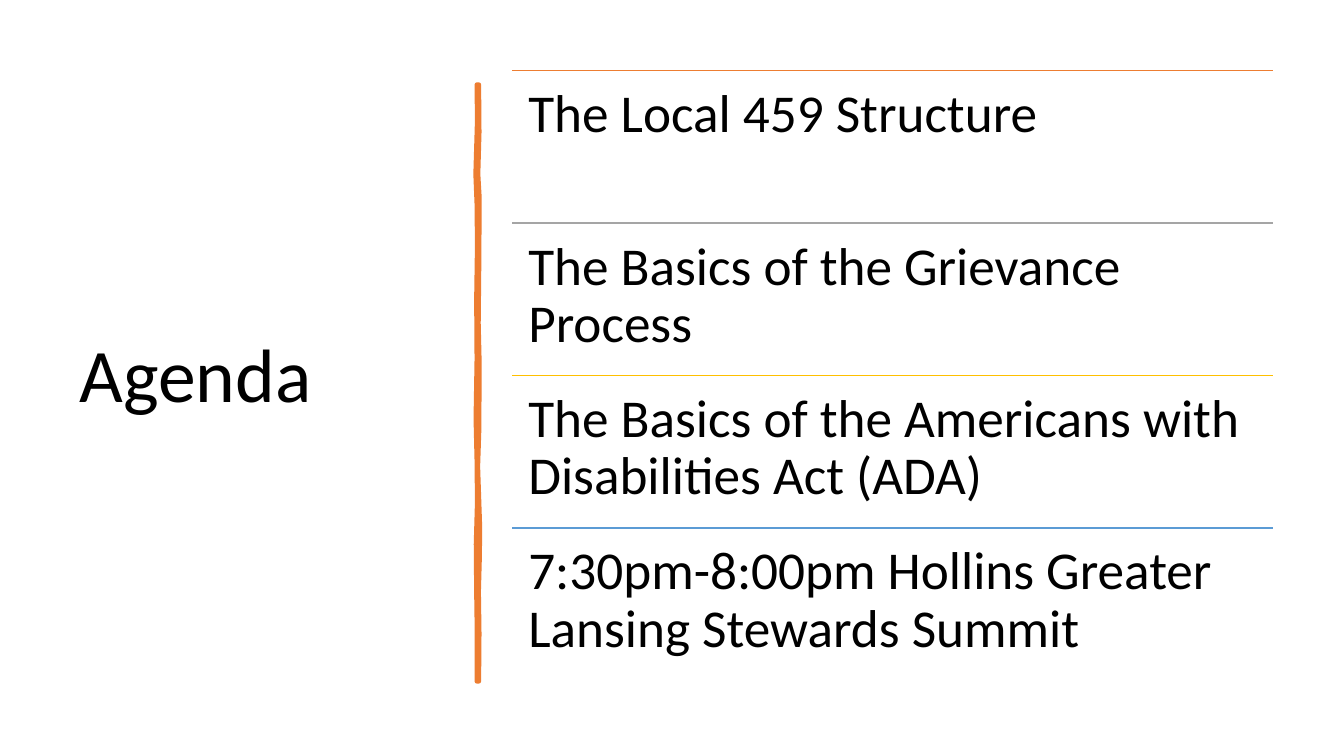
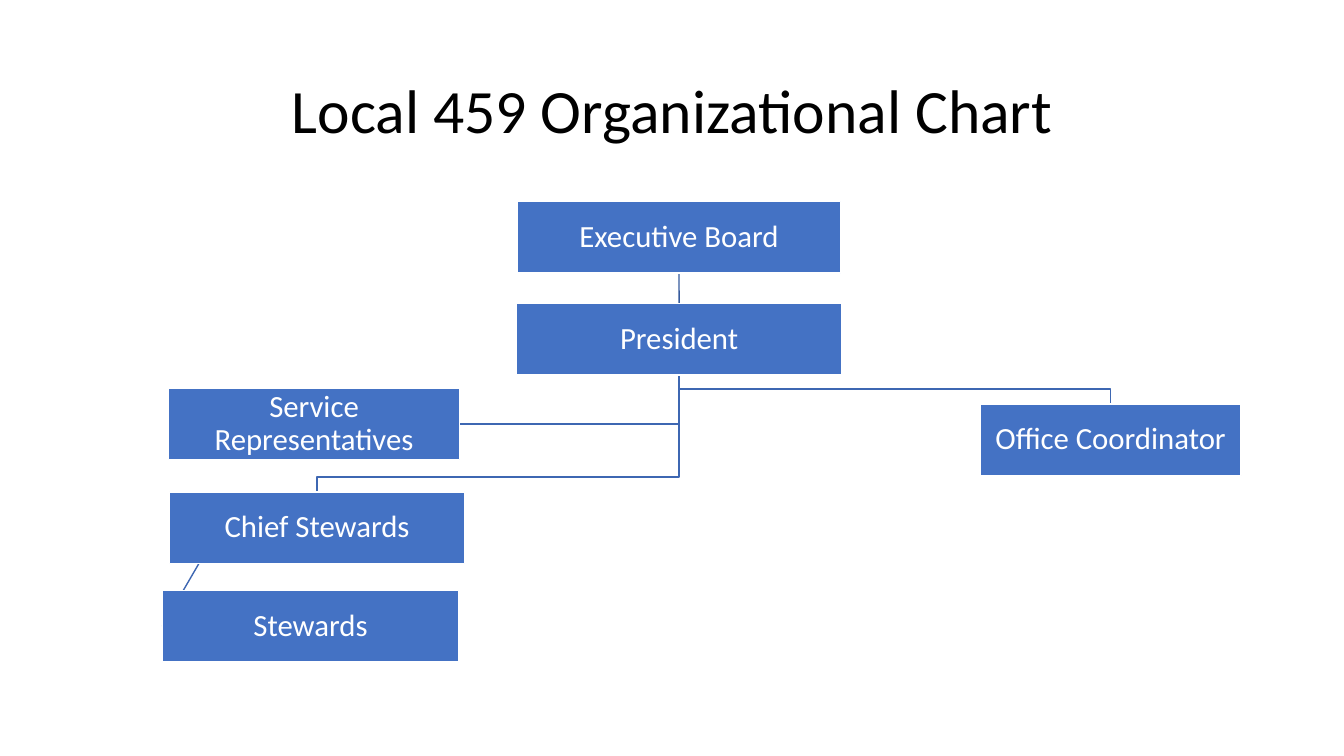
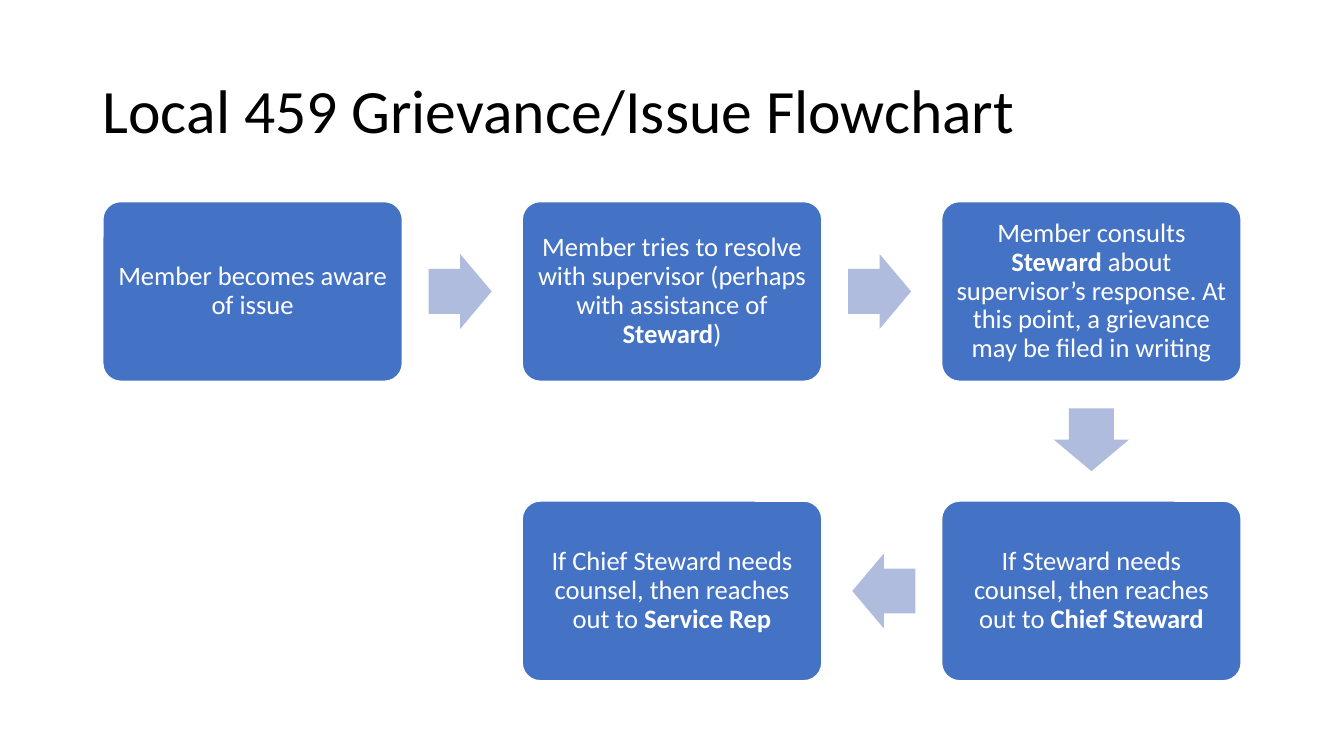
from collections import namedtuple
from math import atan2, degrees

from lxml.etree import SubElement
from pptx import Presentation
from pptx.dml.color import RGBColor
from pptx.enum.shapes import MSO_CONNECTOR, MSO_SHAPE
from pptx.enum.text import MSO_ANCHOR, PP_ALIGN
from pptx.oxml.ns import qn
from pptx.util import Emu, Inches, Pt

COLORS = {
    "text": "000000",
    "white": "FFFFFF",
    "box": "4472C4",
    "arrow": "B0BCDE",
    "branch": "3E67B2",
    "trunk": "365B9D",
    "orange": "ED7D31",
    "gray": "A5A5A5",
    "gold": "FFC000",
    "sky": "5B9BD5",
}
FONT = "Calibri"


class Box(namedtuple("Box", "left top width height")):
    """A rectangle in EMU that can be divided by percentages."""

    def point(self, across, down):
        """Return the point at the given percentages of the box."""
        return (Emu(round(self.left + self.width * across / 100)),
                Emu(round(self.top + self.height * down / 100)))

    def area(self, left, top, width, height):
        """Return the area at the given percentages of the box."""
        return Box(*self.point(left, top),
                   Emu(round(self.width * width / 100)),
                   Emu(round(self.height * height / 100)))


SLIDE = Box(0, 0, Inches(13.33), Inches(7.5))
TITLE = SLIDE.area(6.9, 5.33, 86.27, 19.33)
CONTENT = SLIDE.area(7.65, 26.67, 84.7, 63.33)
AGENDA_TITLE = SLIDE.area(5.18, 9.33, 28.06, 81.47)
AGENDA_BAR = SLIDE.area(35.48, 11.2, 0.15, 78.93)
AGENDA_LIST = SLIDE.area(38.11, 9.33, 56.64, 80.67)

AGENDA = [
    ("The Local 459 Structure", "orange"),
    ("The Basics of the Grievance Process", "gray"),
    ("The Basics of the Americans with Disabilities Act (ADA)", "gold"),
    ("7:30pm-8:00pm Hollins Greater Lansing Stewards Summit", "sky"),
]
BAR_RIGHT_EDGE = [(100, 0), (120, 8), (60, 15), (130, 19), (110, 30), (80, 40),
                  (130, 47), (110, 58), (50, 64), (150, 74), (140, 79),
                  (90, 85), (120, 92), (100, 100)]
BAR_LEFT_EDGE = [(0, 100), (10, 92), (-20, 85), (-40, 77), (20, 70), (0, 63),
                 (-50, 56), (0, 46), (-20, 36), (20, 27), (0, 20),
                 (-60, 15), (20, 6), (0, 0)]
ORGANIZATION = {
    "Executive Board": (36.4, 0, 28.43),
    "President": (36.32, 21.26, 28.61),
    "Chief Stewards": (5.85, 60.63, 25.95),
    "Stewards": (5.23, 81.26, 26.04),
    "Office Coordinator": (77.06, 42.32, 22.94),
    "Service Representatives": (5.76, 38.95, 25.6),
}
ORGANIZATION_ROW = 14.95
STEPS = [
    (0, 0, [("Member becomes aware of issue", False)]),
    (1, 0, [("Member tries to resolve with supervisor (perhaps with assistance of ", False),
            ("Steward", True), (")", False)]),
    (2, 0, [("Member consults ", False), ("Steward", True),
            (" about supervisor’s response. At this point, a grievance may be filed in writing",
             False)]),
    (2, 1, [("If Steward needs counsel, then reaches out to ", False),
            ("Chief Steward", True)]),
    (1, 1, [("If Chief Steward needs counsel, then reaches out to ", False),
            ("Service Rep", True)]),
]


def color(name):
    """Return the named colour."""
    return RGBColor.from_string(COLORS[name])


def write(shape, runs, size, color_name, align, anchor, margins):
    """Fill a shape with one paragraph of (text, bold) runs."""
    frame = shape.text_frame
    frame.word_wrap = True
    frame.vertical_anchor = anchor
    frame.margin_left = frame.margin_right = Inches(margins[0])
    frame.margin_top = frame.margin_bottom = Inches(margins[1])
    paragraph = frame.paragraphs[0]
    paragraph.alignment = align
    paragraph.line_spacing = 0.9
    paragraph.font.name = FONT
    paragraph.font.size = Pt(size)
    paragraph.font.color.rgb = color(color_name)
    for text, bold in runs:
        run = paragraph.add_run()
        run.text = text
        if bold:
            run.font.bold = True


def add_title(slide, box, text, size=44, align=PP_ALIGN.LEFT):
    """Add the slide title."""
    write(slide.shapes.add_textbox(*box), [(text, False)], size, "text",
          align, MSO_ANCHOR.MIDDLE, (0.1, 0.05))


def add_preset(slide, preset, box, fill, outlined=True):
    """Add a flat preset shape, with a white outline if wanted."""
    shape = slide.shapes.add_shape(preset, *box)
    shape.shadow.inherit = False
    shape.fill.solid()
    shape.fill.fore_color.rgb = color(fill)
    if outlined:
        shape.line.color.rgb = color("white")
        shape.line.width = Pt(1)
    else:
        shape.line.fill.background()
    return shape


def add_line(slide, start, end, color_name):
    """Add a straight connector."""
    connector = slide.shapes.add_connector(MSO_CONNECTOR.STRAIGHT, *start, *end)
    connector.line.color.rgb = color(color_name)
    connector.line.width = Pt(1)
    SubElement(connector._element.spPr, qn("a:effectLst"))


def add_outline(slide, points, color_name, width, closed):
    """Add a freeform through the points, filled when closed."""
    builder = slide.shapes.build_freeform(*points[0])
    builder.add_line_segments(points[1:], close=closed)
    shape = builder.convert_to_shape()
    shape.shadow.inherit = False
    shape.line.color.rgb = color(color_name)
    shape.line.width = Pt(width)
    if closed:
        shape.fill.solid()
        shape.fill.fore_color.rgb = color(color_name)
    else:
        shape.fill.background()


def add_agenda(slide, box):
    """Stack the agenda items, each under its own rule."""
    row = 100 / len(AGENDA)
    for index, (text, rule) in enumerate(AGENDA):
        top = index * row
        add_line(slide, box.point(0, top), box.point(100, top), rule)
        item = slide.shapes.add_textbox(*box.area(0, top, 100, row))
        write(item, [(text, False)], 38, "text", PP_ALIGN.LEFT,
              MSO_ANCHOR.TOP, (0.16, 0.16))


def add_organization(slide, box):
    """Draw the organization tree, branches behind boxes."""
    places = {name: box.area(left, top, width, ORGANIZATION_ROW)
              for name, (left, top, width) in ORGANIZATION.items()}
    president = places["President"]
    service = places["Service Representatives"]
    stewards = places["Stewards"]
    chief = places["Chief Stewards"]
    start = president.point(50, 100)
    side = service.point(100, 50)
    add_outline(slide, [start, (start[0], side[1]), side], "branch", 1, False)
    for name in ("Office Coordinator", "Chief Stewards"):
        end = places[name].point(50, 0)
        bend = places[name].point(50, -21)
        add_outline(slide, [start, (start[0], bend[1]), bend, end], "branch", 1, False)
    add_line(slide, chief.point(10, 100), stewards.point(0, 50), "branch")
    add_line(slide, places["Executive Board"].point(50, 100),
             president.point(50, 0), "trunk")
    for name, place in places.items():
        shape = add_preset(slide, MSO_SHAPE.RECTANGLE, place, "box")
        write(shape, [(name, False)], 22, "white", PP_ALIGN.CENTER,
              MSO_ANCHOR.MIDDLE, (0.02, 0.02))


def add_step_arrow(slide, first, second):
    """Place an arrow between two steps, slightly nearer the first."""
    start, end = first.point(50, 50), second.point(50, 50)
    across, down = end[0] - start[0], end[1] - start[1]
    width, height = round(first.width * 0.21), round(first.width * 0.25)
    center = start[0] + across * 0.495, start[1] + down * 0.495
    place = Box(round(center[0] - width / 2), round(center[1] - height / 2), width, height)
    arrow = add_preset(slide, MSO_SHAPE.RIGHT_ARROW, place, "arrow", outlined=False)
    arrow.adjustments[0], arrow.adjustments[1] = 0.6, 0.5
    arrow.rotation = degrees(atan2(down, across)) % 360


def add_flowchart(slide, box):
    """Lay the steps on a grid of three columns and two rows."""
    width = box.width / 3.8
    height = width * 0.6
    places = [Box(round(box.left + column * width * 1.4), round(box.top + row * width),
                  round(width), round(height)) for column, row, _ in STEPS]
    for place, (_, _, runs) in zip(places, STEPS):
        shape = add_preset(slide, MSO_SHAPE.ROUNDED_RECTANGLE, place, "box")
        shape.adjustments[0] = 0.1
        write(shape, runs, 19, "white", PP_ALIGN.CENTER,
              MSO_ANCHOR.MIDDLE, (0.08, 0.08))
    for first, second in zip(places, places[1:]):
        add_step_arrow(slide, first, second)


def main():
    """Build and save the presentation."""
    presentation = Presentation()
    presentation.slide_width, presentation.slide_height = SLIDE.width, SLIDE.height
    agenda, organization, flowchart = (
        presentation.slides.add_slide(presentation.slide_layouts[6]) for _ in range(3))

    add_title(agenda, AGENDA_TITLE, "Agenda", 54)
    edge = [AGENDA_BAR.point(*place) for place in BAR_RIGHT_EDGE + BAR_LEFT_EDGE]
    add_outline(agenda, edge, "orange", 3.25, True)
    add_agenda(agenda, AGENDA_LIST)

    add_title(organization, TITLE, "Local 459 Organizational Chart", align=PP_ALIGN.CENTER)
    add_organization(organization, CONTENT)

    add_title(flowchart, TITLE, "Local 459 Grievance/Issue Flowchart")
    add_flowchart(flowchart, CONTENT)
    presentation.save("out.pptx")


if __name__ == "__main__":
    main()
